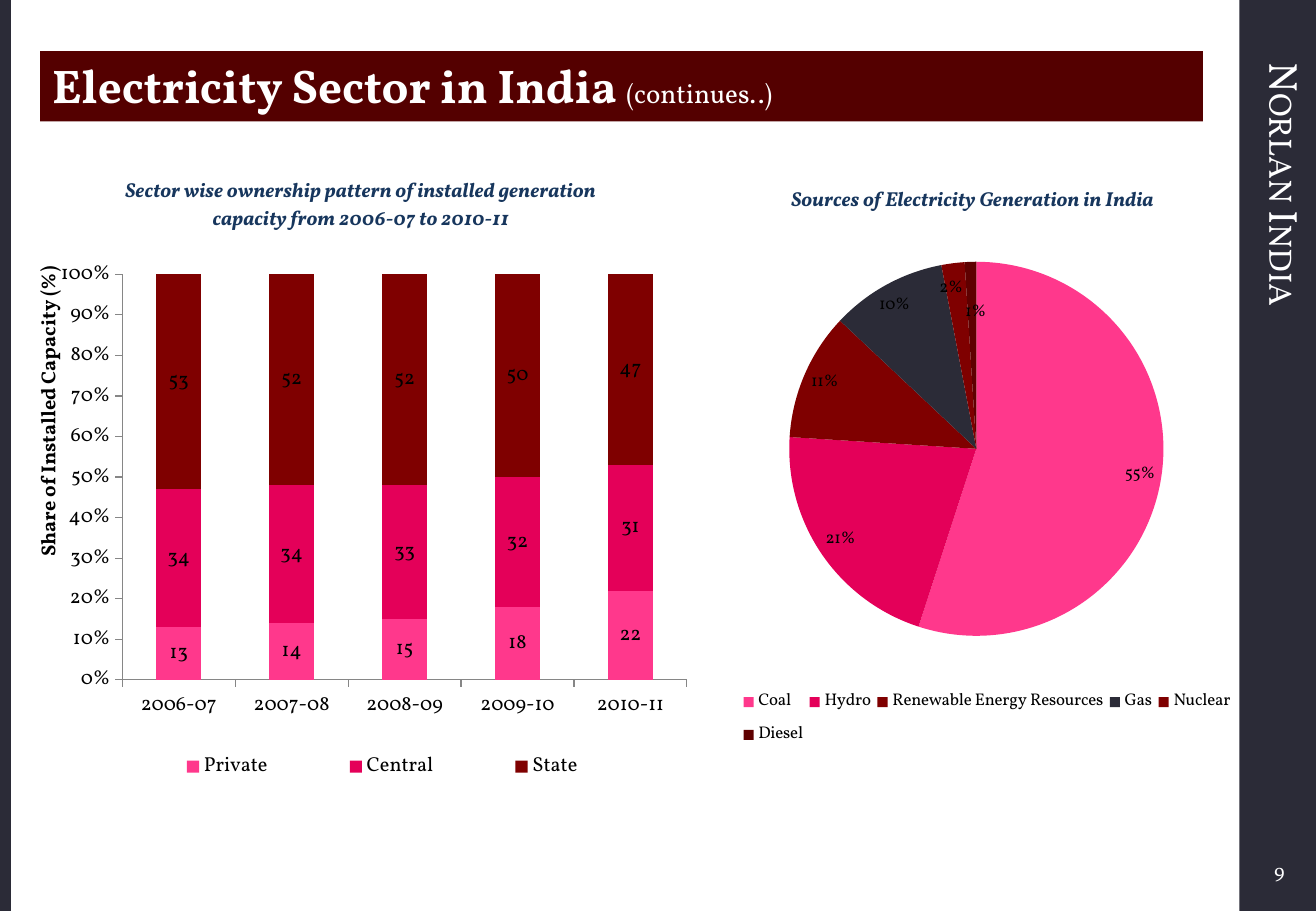
from lxml import etree
from pptx import Presentation
from pptx.chart.data import CategoryChartData
from pptx.dml.color import RGBColor
from pptx.enum import chart as ce, shapes, text
from pptx.oxml import parse_xml
from pptx.oxml.ns import nsdecls, qn
from pptx.util import Inches, Pt

# Content
BRAND = "Norlan India"
PAGE = "9"
HEADING = [("Electricity Sector in India ", 28, True), ("(continues..)", 16, False)]
OWNERSHIP_TITLE = ("Sector wise ownership pattern of installed generation "
                   "capacity from 2006-07 to 2010-11")
SHARE_AXIS = "Share of Installed Capacity (%)"
YEARS = ["2006-07", "2007-08", "2008-09", "2009-10", "2010-11"]
SOURCES_TITLE = "Sources of Electricity Generation in India"

# Colours and font
FONT = "Vollkorn"
WHITE = RGBColor(0xFF, 0xFF, 0xFF)
BLACK = RGBColor(0, 0, 0)
SLATE = RGBColor(0x2B, 0x2B, 0x37)
NAVY = RGBColor(0x17, 0x36, 0x5D)
GREY = RGBColor(0x86, 0x86, 0x86)
PINK = RGBColor(0xFF, 0x38, 0x8C)
MAGENTA = RGBColor(0xE4, 0x00, 0x59)
RED = RGBColor(0x7F, 0x00, 0x00)
MAROON = RGBColor(0x5F, 0x00, 0x00)
BANNER = RGBColor(0x54, 0x00, 0x00)

OWNERS = [("Private", [13, 14, 15, 18, 22], PINK),
          ("Central", [34, 34, 33, 32, 31], MAGENTA),
          ("State", [53, 52, 52, 50, 47], RED)]
SOURCES = [("Coal", 0.55, PINK), ("Hydro", 0.21, MAGENTA),
           ("Renewable Energy Resources", 0.11, RED), ("Gas", 0.10, SLATE),
           ("Nuclear", 0.02, RED), ("Diesel", 0.01, MAROON)]
# Label shifts for the thin slices, by slice number
THIN_SLICES = {4: (0.02, 0.07), 5: (0.01, 0.11)}


def paint(part, color):
    part.fill.solid()
    part.fill.fore_color.rgb = color


def style(font, size, color, bold=False, italic=False):
    font.name, font.size, font.bold, font.italic = FONT, Pt(size), bold, italic
    font.color.rgb = color


def add_run(paragraph, words, size, color, bold=False, italic=False):
    run = paragraph.add_run()
    run.text = words
    style(run.font, size, color, bold, italic)
    return run


def place(element, x, y, w=None, h=None, inner=False, offset=False):
    """Give a chart part a manual layout, in fractions of the chart."""
    for old in element.findall(qn("c:layout")):
        element.remove(old)
    layout = parse_xml(f"<c:layout {nsdecls('c')}><c:manualLayout/></c:layout>")
    settings = [("layoutTarget", "inner" if inner else None),
                ("xMode", None if offset else "edge"),
                ("yMode", None if offset else "edge"),
                ("x", x), ("y", y), ("w", w), ("h", h)]
    for tag, value in settings:
        if value is not None:
            etree.SubElement(layout[0], qn(f"c:{tag}")).set("val", str(value))
    before = [child for child in element
              if child.tag in (qn("c:tx"), qn("c:idx"), qn("c:legendPos"))]
    element.insert(element.index(before[-1]) + 1 if before else 0, layout)


def add_chart(slide, kind, box, data, size, title, title_at, plot, legend):
    chart = slide.shapes.add_chart(kind, *map(Inches, box), data).chart
    style(chart.font, size, BLACK)
    chart.has_title = True
    add_run(chart.chart_title.text_frame.paragraphs[0], title, 12, NAVY, True, True)
    chart.chart_title.include_in_layout = False
    place(chart.chart_title._element, *title_at)
    chart.has_legend = True
    chart.legend.position = ce.XL_LEGEND_POSITION.BOTTOM
    chart.legend.include_in_layout = False
    style(chart.legend.font, size, BLACK)
    place(chart.legend._element, *legend)
    place(chart._chartSpace.chart.plotArea, *plot, inner=True)
    return chart


prs = Presentation()
prs.slide_width, prs.slide_height = Inches(10.83), Inches(7.5)
slide = prs.slides.add_slide(prs.slide_layouts[5])

# Side bands
for left, width in [(10.2, 0.63), (0, 0.09)]:
    band = slide.shapes.add_shape(shapes.MSO_SHAPE.RECTANGLE, Inches(left), 0,
                                  Inches(width), prs.slide_height)
    band.shadow.inherit = False
    paint(band, SLATE)
    band.line.fill.background()

# Brand name down the right band
brand = slide.shapes.add_textbox(*map(Inches, (10.2, 0.42, 0.63, 6.42))).text_frame
brand.word_wrap = True
brand._txBody.bodyPr.set("vert", "vert")
brand_run = add_run(brand.paragraphs[0], BRAND, 24, WHITE)
brand_run.font._element.set("cap", "small")

# Page number
page = slide.shapes.add_textbox(*map(Inches, (9.5, 7, 1.17, 0.33))).text_frame
page.word_wrap = True
page.vertical_anchor = text.MSO_ANCHOR.MIDDLE
page.paragraphs[0].alignment = text.PP_ALIGN.RIGHT
add_run(page.paragraphs[0], PAGE, 12, WHITE)

# Heading banner
heading = slide.shapes.title
heading.left, heading.top, heading.width, heading.height = map(
    Inches, (0.33, 0.42, 9.57, 0.58))
paint(heading, BANNER)
heading.text_frame.auto_size = text.MSO_AUTO_SIZE.NONE
heading.text_frame.vertical_anchor = text.MSO_ANCHOR.MIDDLE
heading.text_frame.margin_bottom = Inches(0.08)
heading.text_frame.paragraphs[0].alignment = text.PP_ALIGN.LEFT
for words, size, bold in HEADING:
    add_run(heading.text_frame.paragraphs[0], words, size, WHITE, bold)

# Ownership chart
owner_data = CategoryChartData(number_format="General")
owner_data.categories = YEARS
for name, shares, _ in OWNERS:
    owner_data.add_series(name, shares)
ownership = add_chart(slide, ce.XL_CHART_TYPE.COLUMN_STACKED_100,
                      (0.25, 1.17, 5.57, 5.5), owner_data, 12,
                      OWNERSHIP_TITLE, (0.135, 0.045),
                      (0.136, 0.198, 0.834, 0.607), (0.12, 0.9, 0.8, 0.07))
columns = ownership.plots[0]
columns.gap_width, columns.overlap = 150, 100
for series, (_, _, color) in zip(columns.series, OWNERS):
    paint(series.format, color)
    series.data_labels.show_value = True
    style(series.data_labels.font, 12, BLACK)
for axis in (ownership.category_axis, ownership.value_axis):
    axis.has_major_gridlines = False
    axis.major_tick_mark = ce.XL_TICK_MARK.OUTSIDE
    axis.format.line.color.rgb = GREY
    style(axis.tick_labels.font, 12, BLACK)
share = ownership.value_axis
share.maximum_scale, share.major_unit = 1, 0.1
share.tick_labels.number_format = "0%"
share.tick_labels.number_format_is_linked = False
add_run(share.axis_title.text_frame.paragraphs[0], SHARE_AXIS, 12, BLACK, True)
place(share.axis_title._element, 0, 0.18)

# Sources chart
source_data = CategoryChartData(number_format="0%")
source_data.categories = [name for name, _, _ in SOURCES]
source_data.add_series("Series 1", [value for _, value, _ in SOURCES])
sources = add_chart(slide, ce.XL_CHART_TYPE.PIE, (5.83, 1.33, 4.35, 5.17),
                    source_data, 10, SOURCES_TITLE, (0.15, 0.032),
                    (0.153, 0.081, 0.708, 0.753), (0.054, 0.827, 0.946, 0.12))
pie = sources.plots[0]
pie.vary_by_categories = True
slices = pie.series[0]
for i, (_, _, color) in enumerate(SOURCES):
    paint(slices.points[i].format, color)
labels = slices.data_labels
labels.show_value = True
labels.show_percentage = False
labels.number_format, labels.number_format_is_linked = "0%", False
labels.position = ce.XL_LABEL_POSITION.BEST_FIT
style(labels.font, 10, BLACK)

# Thin slices: labels moved clear of each other
for i, shift in THIN_SLICES.items():
    thin = slices.points[i].data_label
    style(thin.font, 10, BLACK)
    thin.position = ce.XL_LABEL_POSITION.BEST_FIT
    place(thin._dLbl, *shift, offset=True)

prs.save("out.pptx")
